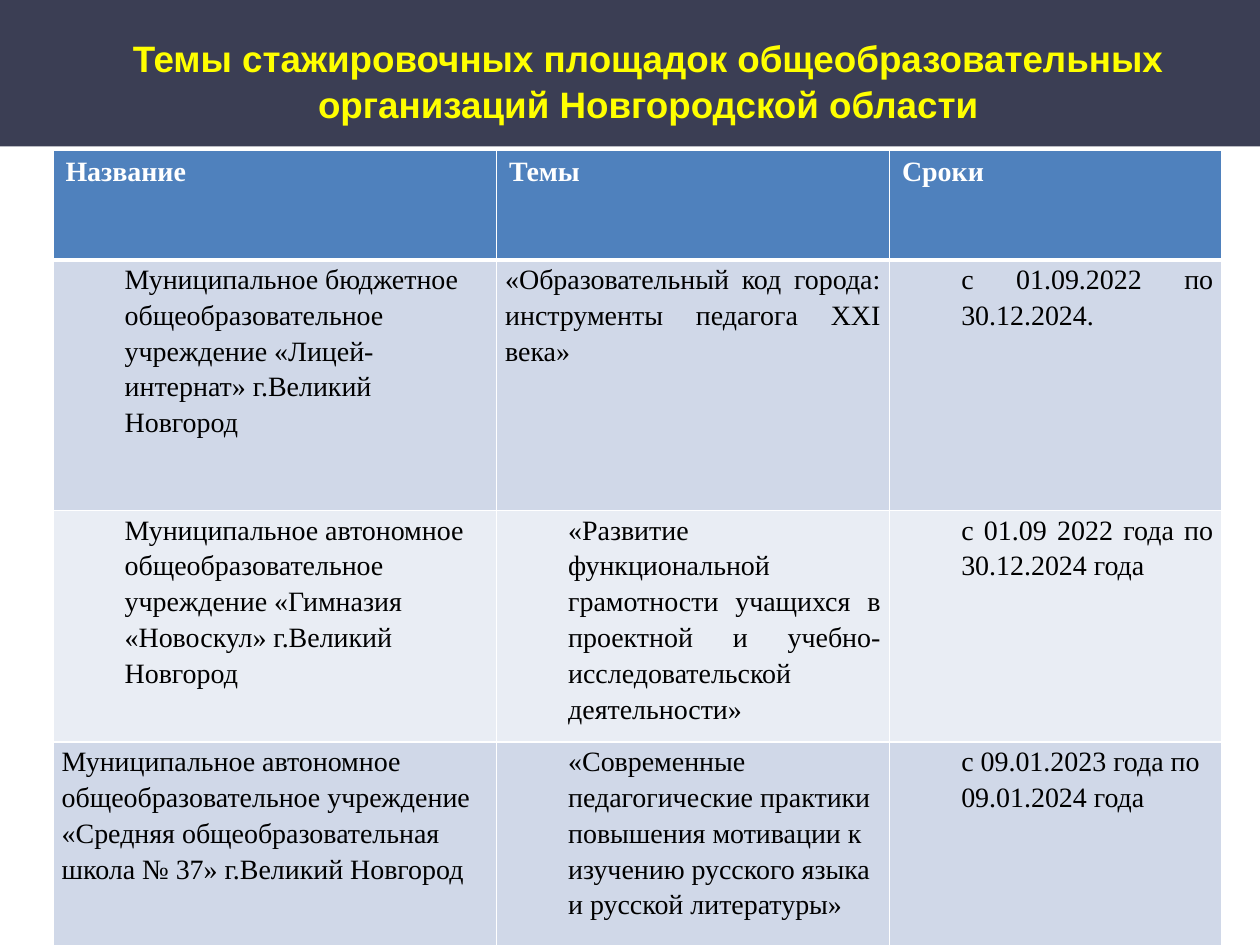
from dataclasses import dataclass

from lxml import etree
from pptx import Presentation, util as u
from pptx.dml.color import RGBColor
from pptx.enum import shapes, text
from pptx.oxml import ns

COLORS = {
    "band": "3B3E54",
    "title": "FFFF00",
    "header": "4F81BD",
    "odd": "D0D8E8",
    "even": "E9EDF4",
    "white": "FFFFFF",
    "black": "000000",
}
WIDTH, HEIGHT = u.Inches(10), u.Inches(7.5)
COLUMN_WIDTHS = (3.52, 3.12, 2.64)
ROW_HEIGHTS = (0.87, 1.99, 1.7, 1.7)
LEFT, JUSTIFY = text.PP_ALIGN.LEFT, text.PP_ALIGN.JUSTIFY


@dataclass(frozen=True)
class Entry:
    wording: str
    indent: float = 0.5
    alignment: text.PP_ALIGN = LEFT


HEADINGS = [Entry("Название", 0), Entry("Темы", 0), Entry("Сроки", 0)]
SITES = [
    [
        Entry("Муниципальное бюджетное общеобразовательное учреждение "
              "«Лицей-интернат» г.Великий Новгород"),
        Entry("«Образовательный код города: инструменты педагога XXI века»", 0, JUSTIFY),
        Entry("с 01.09.2022 по 30.12.2024.", alignment=JUSTIFY),
    ],
    [
        Entry("Муниципальное автономное общеобразовательное учреждение "
              "«Гимназия «Новоскул» г.Великий Новгород"),
        Entry("«Развитие функциональной грамотности учащихся в проектной и "
              "учебно-исследовательской деятельности»", alignment=JUSTIFY),
        Entry("с 01.09 2022 года по 30.12.2024 года", alignment=JUSTIFY),
    ],
    [
        Entry("Муниципальное автономное общеобразовательное учреждение "
              "«Средняя общеобразовательная школа № 37» г.Великий Новгород", 0),
        Entry("«Современные педагогические практики повышения мотивации к "
              "изучению русского языка и русской литературы»"),
        Entry("с 09.01.2023 года по 09.01.2024 года"),
    ],
]


def rgb(name: str) -> RGBColor:
    return RGBColor.from_string(COLORS[name])


def apply(target, values: dict) -> None:
    for name, value in values.items():
        setattr(target, name, value)


def share(left: float, top: float, width: float, height: float) -> tuple:
    return tuple(round(part * size) for part, size in
                 zip((left, top, width, height), (WIDTH, HEIGHT) * 2))


def write(paragraph, wording: str, color: str, font: dict) -> None:
    run = paragraph.add_run()
    run.text = wording
    apply(run.font, font)
    run.font.color.rgb = rgb(color)


def draw_band(slide) -> None:
    band = slide.shapes.add_shape(shapes.MSO_SHAPE.RECTANGLE, *share(0, 0, 1, 0.155))
    band.shadow.inherit = False
    band.fill.solid()
    band.fill.fore_color.rgb = rgb("band")
    band.line.fill.background()


def draw_title(slide) -> None:
    frame = slide.shapes.add_textbox(*share(0.043, 0.035, 0.943, 0.14)).text_frame
    apply(frame, {"word_wrap": True, "margin_left": 0, "margin_right": 0,
                  "margin_top": 0, "margin_bottom": 0})
    paragraph = frame.paragraphs[0]
    apply(paragraph, {"alignment": text.PP_ALIGN.CENTER, "line_spacing": 1.05})
    write(paragraph, "Темы стажировочных площадок общеобразовательных "
          "организаций Новгородской области", "title",
          {"name": "Arial", "size": u.Pt(21), "bold": True})


def draw_borders(cell, widths: dict) -> None:
    properties = cell._tc.get_or_add_tcPr()
    for side, width in widths.items():
        line = etree.SubElement(properties, ns.qn(f"a:ln{side}"), w=str(u.Pt(width)))
        fill = etree.SubElement(line, ns.qn("a:solidFill"))
        etree.SubElement(fill, ns.qn("a:srgbClr"), val=COLORS["white"])


def fill_cell(cell, entry: Entry, row: int) -> None:
    heading = row == 0
    draw_borders(cell, {"L": 1, "R": 1, "T": 3 if row == 1 else 1, "B": 3 if heading else 1})
    cell.fill.solid()
    cell.fill.fore_color.rgb = rgb("header" if heading else "odd" if row % 2 else "even")
    paragraph = cell.text_frame.paragraphs[0]
    paragraph.alignment = entry.alignment
    if not heading:
        side = u.Inches(0.07)
        apply(cell, {"margin_left": side, "margin_right": side,
                     "margin_top": 0, "margin_bottom": 0})
        paragraph.line_spacing = 1.15
        layout = paragraph._p.get_or_add_pPr()
        layout.set("marL", str(u.Inches(entry.indent)))
        layout.set("indent", "0")
    write(paragraph, entry.wording, "white" if heading else "black",
          {"name": "Times New Roman", "size": u.Pt(16), "bold": heading})


def draw_table(slide) -> None:
    rows = [HEADINGS, *SITES]
    area = share(0.042, 0.159, sum(COLUMN_WIDTHS) / 10, sum(ROW_HEIGHTS) / 7.5)
    table = slide.shapes.add_table(len(rows), len(HEADINGS), *area).table
    for column, width in zip(table.columns, COLUMN_WIDTHS):
        column.width = u.Inches(width)
    for index, (entries, height) in enumerate(zip(rows, ROW_HEIGHTS)):
        table.rows[index].height = u.Inches(height)
        for cell, entry in zip(table.rows[index].cells, entries):
            fill_cell(cell, entry, index)


def main() -> None:
    presentation = Presentation()
    apply(presentation, {"slide_width": WIDTH, "slide_height": HEIGHT})
    slide = presentation.slides.add_slide(presentation.slide_layouts[6])
    draw_band(slide)
    draw_title(slide)
    draw_table(slide)
    presentation.save("out.pptx")


if __name__ == "__main__":
    main()
